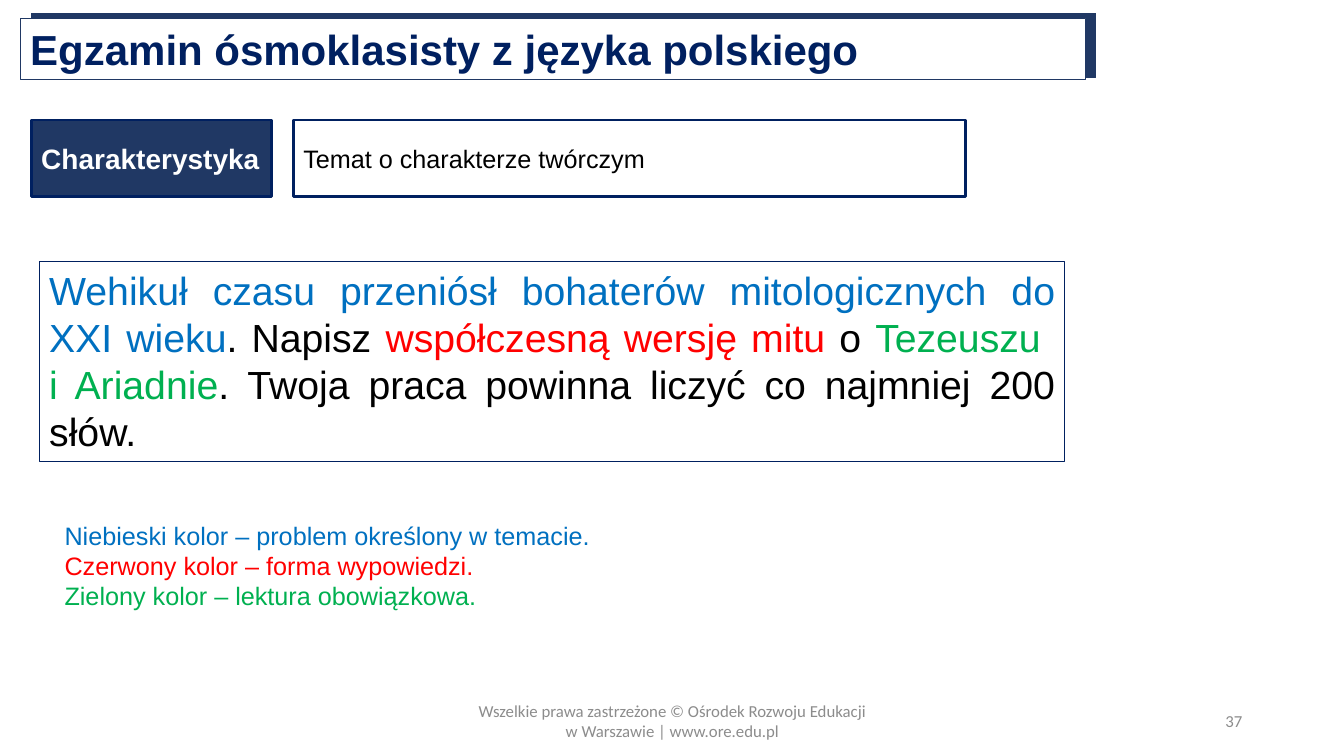
from lxml.etree import SubElement
from pptx import Presentation
from pptx.dml.color import RGBColor
from pptx.enum.shapes import MSO_SHAPE
from pptx.enum.text import MSO_ANCHOR, MSO_AUTO_SIZE, PP_ALIGN
from pptx.oxml.ns import qn
from pptx.util import Inches, Pt

NAVY = RGBColor(0x20, 0x38, 0x64)
DARK_BLUE = RGBColor(0x00, 0x20, 0x60)
BLUE = RGBColor(0x00, 0x70, 0xC0)
RED = RGBColor(0xFF, 0x00, 0x00)
GREEN = RGBColor(0x00, 0xB0, 0x50)
BLACK = RGBColor(0x00, 0x00, 0x00)
WHITE = RGBColor(0xFF, 0xFF, 0xFF)
GRAY = RGBColor(0x8C, 0x8C, 0x8C)


class ExamSlide:
    font = "Arial"
    footer_font = "Calibri"

    def __init__(self, presentation):
        self.slide = presentation.slides.add_slide(presentation.slide_layouts[1])
        self.shapes = self.slide.shapes

    def place(self, shape, left, top, width, height):
        shape.left, shape.top = Inches(left), Inches(top)
        shape.width, shape.height = Inches(width), Inches(height)

    def outline(self, shape, fill, line, weight):
        if fill is None:
            shape.fill.background()
        else:
            shape.fill.solid()
            shape.fill.fore_color.rgb = fill
        shape.line.color.rgb = line
        shape.line.width = Pt(weight)

    def set_text(self, shape, paragraphs, size, align=PP_ALIGN.LEFT,
                 anchor=MSO_ANCHOR.TOP, bold=False, font=None):
        frame = shape.text_frame
        frame.word_wrap = True
        frame.auto_size = MSO_AUTO_SIZE.NONE
        frame.vertical_anchor = anchor
        for index, pieces in enumerate(paragraphs):
            paragraph = frame.add_paragraph() if index else frame.paragraphs[0]
            paragraph.alignment = align
            paragraph.space_before = Pt(0)
            for text, color in pieces:
                for number, part in enumerate(text.split("\n")):
                    if number:
                        paragraph.add_line_break()
                    run = paragraph.add_run()
                    run.text = part
                    run.font.name = font or self.font
                    run.font.size = Pt(size)
                    run.font.bold = bold
                    run.font.color.rgb = color

    def box(self, position, fill, line, weight):
        shape = self.shapes.add_shape(MSO_SHAPE.RECTANGLE, *map(Inches, position))
        shape.shadow.inherit = False
        self.outline(shape, fill, line, weight)
        return shape

    def title(self, text, position):
        title = self.shapes.title
        self.place(title, *position)
        self.outline(title, WHITE, NAVY, 0.75)
        self.set_text(title, [[(text, DARK_BLUE)]], 30, bold=True)
        self.shapes._spTree.append(title._element)

    def legend(self, entries, position):
        body = self.slide.placeholders[1]
        self.place(body, *position)
        self.set_text(body, [[entry] for entry in entries], 18)
        for paragraph in body.text_frame.paragraphs:
            properties = paragraph._p.get_or_add_pPr()
            properties.set("marL", "0")
            properties.set("indent", "0")
            SubElement(properties, qn("a:buNone"))

    def footer(self, lines, position, align):
        shape = self.shapes.add_textbox(*map(Inches, position))
        self.set_text(shape, [[(line, GRAY)] for line in lines], 12, align,
                      MSO_ANCHOR.MIDDLE, font=self.footer_font)

    def make_transparent(self, shape, percent):
        color = shape._element.spPr.find(qn("a:solidFill"))[0]
        SubElement(color, qn("a:alpha")).set("val", str(percent * 1000))


def main():
    presentation = Presentation()
    presentation.slide_width = Inches(13.33)
    presentation.slide_height = Inches(7.5)
    exam = ExamSlide(presentation)

    exam.footer(["Wszelkie prawa zastrzeżone © Ośrodek Rozwoju Edukacji",
                 "w Warszawie | www.ore.edu.pl"], (4.42, 6.95, 4.5, 0.4), PP_ALIGN.CENTER)
    exam.footer(["37"], (9.42, 6.95, 3, 0.4), PP_ALIGN.RIGHT)

    exam.box((0.31, 0.13, 10.56, 0.64), NAVY, NAVY, 0.75)
    exam.title("Egzamin ósmoklasisty z języka polskiego", (0.2, 0.18, 10.57, 0.61))

    label = exam.box((0.31, 1.19, 2.38, 0.76), NAVY, DARK_BLUE, 2)
    exam.set_text(label, [[("Charakterystyka", WHITE)]], 20, anchor=MSO_ANCHOR.MIDDLE, bold=True)
    topic = exam.box((2.91, 1.19, 6.67, 0.76), WHITE, DARK_BLUE, 2)
    exam.make_transparent(topic, 25)
    exam.set_text(topic, [[("Temat o charakterze twórczym", BLACK)]], 18, anchor=MSO_ANCHOR.MIDDLE)

    task = exam.box((0.39, 2.59, 10.17, 1.99), None, DARK_BLUE, 0.75)
    exam.set_text(task, [[
        ("Wehikuł czasu przeniósł bohaterów mitologicznych do XXI wieku", BLUE),
        (". Napisz ", BLACK),
        ("współczesną wersję mitu", RED),
        (" o ", BLACK),
        ("Tezeuszu \ni Ariadnie", GREEN),
        (". Twoja praca powinna liczyć co najmniej 200 słów.", BLACK),
    ]], 28, PP_ALIGN.JUSTIFY)

    exam.legend([
        ("Niebieski kolor – problem określony w temacie.", BLUE),
        ("Czerwony kolor – forma wypowiedzi.", RED),
        ("Zielony kolor – lektura obowiązkowa.", GREEN),
    ], (0.54, 5.11, 9.06, 1.01))

    presentation.save("out.pptx")


if __name__ == "__main__":
    main()
